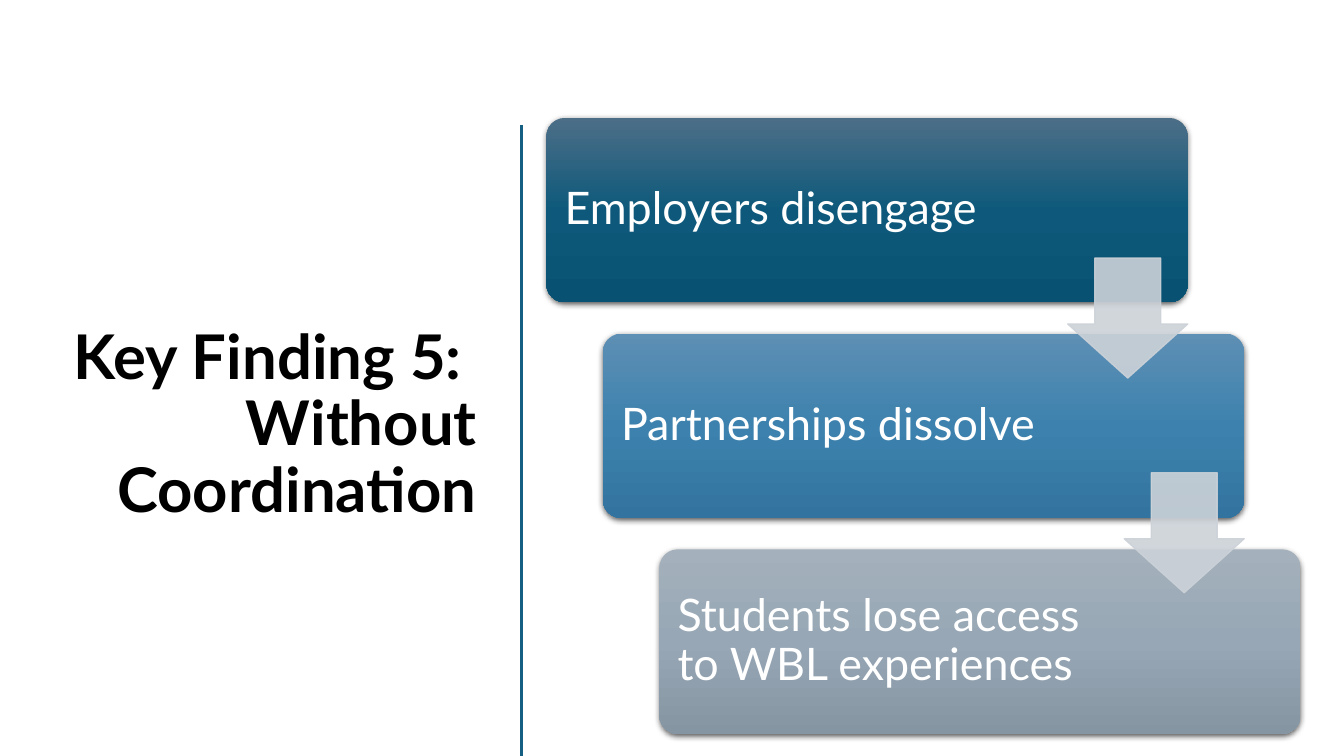
from lxml.etree import SubElement
from pptx import Presentation
from pptx.dml.color import RGBColor
from pptx.enum.shapes import MSO_CONNECTOR, MSO_SHAPE
from pptx.enum.text import MSO_ANCHOR, MSO_AUTO_SIZE, PP_ALIGN
from pptx.oxml.ns import qn
from pptx.util import Inches, Pt

WIDE, HIGH = 13.33, 7.5
LEFT, TOP = 5.42, 1.17
STEP_X, STEP_Y = 0.56, 2.14
CARD_W, CARD_H = 6.36, 1.83
PAD = 0.05
ARROW = 1.19

BLACK = RGBColor(0x00, 0x00, 0x00)
WHITE = RGBColor(0xFF, 0xFF, 0xFF)
TEAL = RGBColor(0x15, 0x60, 0x82)
MIST = RGBColor(0xCC, 0xD2, 0xD8)
DEEP = (RGBColor(0x4C, 0x6E, 0x87), RGBColor(0x0E, 0x59, 0x7B), RGBColor(0x08, 0x51, 0x72))
BLUE = (RGBColor(0x5E, 0x8F, 0xB4), RGBColor(0x3D, 0x82, 0xAE), RGBColor(0x32, 0x74, 0x9F))
GREY = (RGBColor(0xA4, 0xB1, 0xBC), RGBColor(0x97, 0xA7, 0xB5), RGBColor(0x85, 0x95, 0xA2))

CARDS = [
    ("Employers disengage", DEEP, 4.38),
    ("Partnerships dissolve", BLUE, 4.5),
    ("Students lose access to WBL experiences", GREY, 4.5),
]
HEAD = {"name": "Lato", "size": Pt(44), "bold": True}
BODY = {"name": "Lato", "size": Pt(32), "bold": False}
FRAME = {
    "word_wrap": True,
    "auto_size": MSO_AUTO_SIZE.NONE,
    "vertical_anchor": MSO_ANCHOR.MIDDLE,
}
INSET = {"margin_" + side: Inches(0.13) for side in ("left", "top", "right", "bottom")}


def apply(item, style):
    for key, value in style.items():
        setattr(item, key, value)


def box(x, y, w, h):
    return [Inches(n) for n in (x, y, w, h)]


def write(frame, text, style, color, align):
    apply(frame, FRAME)
    frame.text = text
    para = frame.paragraphs[0]
    apply(para, {"alignment": align, "line_spacing": 0.9})
    for run in para.runs:
        apply(run.font, style)
        run.font.color.rgb = color


def add_tint(parent, color, alpha):
    tint = SubElement(parent, qn("a:srgbClr"), val=str(color))
    SubElement(tint, qn("a:alpha"), val=str(alpha * 1000))


def add_title(slide):
    title = slide.shapes.title
    apply(title, dict(zip(("left", "top", "width", "height"), box(0.52, TOP, 4.31, 6.11))))
    write(title.text_frame, "Key Finding 5: \vWithout Coordination", HEAD, BLACK, PP_ALIGN.RIGHT)


def add_rule(slide):
    ends = box(5.17, 1.24, 5.17, HIGH)
    rule = slide.shapes.add_connector(MSO_CONNECTOR.STRAIGHT, *ends)
    rule.line.color.rgb = TEAL
    rule.line.width = Pt(2)
    SubElement(rule._element.spPr, qn("a:effectLst"))


def add_blend(shape, colors):
    shape.fill.gradient()
    shape.fill.gradient_angle = 270
    stops = shape._element.spPr.find(".//" + qn("a:gsLst"))
    for stop in list(stops):
        stops.remove(stop)
    for i, color in enumerate(colors):
        stop = SubElement(stops, qn("a:gs"), pos=str(i * 50000))
        SubElement(stop, qn("a:srgbClr"), val=str(color))


def add_shade(shape):
    shape.shadow.inherit = False
    effect = shape._element.spPr.find(qn("a:effectLst"))
    shade = SubElement(
        effect, qn("a:outerShdw"), blurRad=str(Pt(4.5)), dist=str(Pt(1.5)),
        dir="5400000", algn="ctr", rotWithShape="0",
    )
    add_tint(shade, BLACK, 63)


def add_card(slide, row, text, colors, width):
    x, y = LEFT + row * STEP_X, TOP + row * STEP_Y
    card = slide.shapes.add_shape(MSO_SHAPE.ROUNDED_RECTANGLE, *box(x, y, CARD_W, CARD_H))
    card.adjustments[0] = 0.1
    add_blend(card, colors)
    card.line.fill.background()
    add_shade(card)
    label = slide.shapes.add_textbox(*box(x + PAD, y + PAD, width, CARD_H - 2 * PAD))
    apply(label.text_frame, INSET)
    write(label.text_frame, text, BODY, WHITE, PP_ALIGN.LEFT)


def add_arrow(slide, row):
    x, y = LEFT + CARD_W - ARROW + row * STEP_X, 2.56 + row * 2.13
    arrow = slide.shapes.add_shape(MSO_SHAPE.DOWN_ARROW, *box(x, y, ARROW, ARROW))
    arrow.adjustments[0] = 0.55
    arrow.adjustments[1] = 0.45
    arrow.line.width = Pt(1)
    for fill in (arrow.fill, arrow.line.fill):
        fill.solid()
        fill.fore_color.rgb = MIST
    for tint in arrow._element.spPr.iter(qn("a:srgbClr")):
        SubElement(tint, qn("a:alpha"), val="90000")
    arrow.shadow.inherit = False


def main():
    deck = Presentation()
    deck.slide_width, deck.slide_height = Inches(WIDE), Inches(HIGH)
    slide = deck.slides.add_slide(deck.slide_layouts[5])
    add_title(slide)
    add_rule(slide)
    for row, card in enumerate(CARDS):
        add_card(slide, row, *card)
    for row in range(len(CARDS) - 1):
        add_arrow(slide, row)
    deck.save("out.pptx")


if __name__ == "__main__":
    main()
